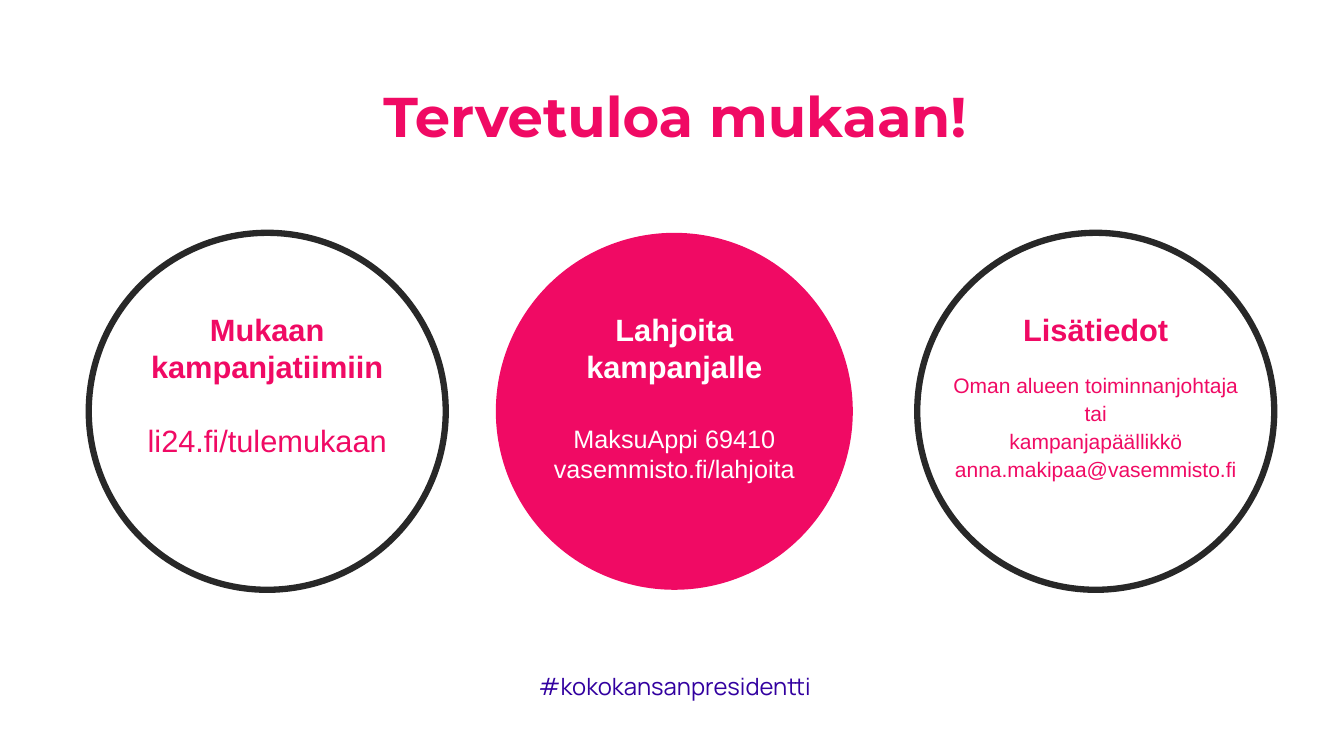
from pptx import Presentation
from pptx.dml.color import RGBColor
from pptx.enum import shapes, text
from pptx.util import Pt

PINK, WHITE, DARK, VIOLET = "F00A64", "FFFFFF", "282828", "3200A0"
DIAMETER, CIRCLE_TOP = 255, 166.3
TEXT_WIDTH, TEXT_TOP = 221, 218.2


def rgb(value):
    return RGBColor.from_string(value)


def format_paragraph(p, size, font, color, bold=False):
    p.alignment = text.PP_ALIGN.CENTER
    for r in p.runs:
        r.font.size = Pt(size)
        r.font.name = font
        r.font.bold = bold
        r.font.color.rgb = rgb(color)


def prepare_frame(sp):
    tf = sp.text_frame
    tf.word_wrap = True
    tf.auto_size = text.MSO_AUTO_SIZE.SHAPE_TO_FIT_TEXT
    tf.vertical_anchor = text.MSO_ANCHOR.TOP
    return tf


def add_title(s, content):
    sp = s.shapes.title
    sp.left, sp.top, sp.width, sp.height = Pt(34.6), Pt(54.7), Pt(895), Pt(55.4)
    tf = prepare_frame(sp)
    tf.text = content
    format_paragraph(tf.paragraphs[0], 40, "Montserrat", PINK, True)


def add_text(s, left, top, width, height):
    return prepare_frame(s.shapes.add_textbox(Pt(left), Pt(top), Pt(width), Pt(height)))


def add_hashtag(s, content):
    tf = add_text(s, 25.9, 476.6, 912.2, 28)
    tf.text = content
    format_paragraph(tf.paragraphs[0], 17, "Manrope", VIOLET)


def add_circle(s, left, filled):
    sp = s.shapes.add_shape(shapes.MSO_SHAPE.OVAL, Pt(left), Pt(CIRCLE_TOP),
                            Pt(DIAMETER), Pt(DIAMETER))
    sp.shadow.inherit = False
    if filled:
        sp.fill.solid()
        sp.fill.fore_color.rgb = rgb(PINK)
        sp.line.fill.background()
    else:
        sp.fill.background()
        sp.line.color.rgb = rgb(DARK)
        sp.line.width = Pt(4.5)


def add_circle_text(s, left, height, color, heading, lines, size, spacing, gap):
    tf = add_text(s, left + (DIAMETER - TEXT_WIDTH) / 2, TEXT_TOP, TEXT_WIDTH, height)
    tf.text = "\n".join([heading, *lines])
    title, *body = tf.paragraphs
    format_paragraph(title, 22, "Arial", color, True)
    title.line_spacing = Pt(26.4)
    for p in body:
        format_paragraph(p, size, "Arial", color)
        p.line_spacing = Pt(spacing)
    body[0].space_before = Pt(gap)


def main():
    prs = Presentation()
    prs.slide_width, prs.slide_height = Pt(960), Pt(540)
    s = prs.slides.add_slide(prs.slide_layouts[5])
    add_title(s, "Tervetuloa mukaan!")
    add_hashtag(s, "#kokokansanpresidentti")
    circles = [
        (63.4, False, 114, "Mukaan kampanjatiimiin",
         ["li24.fi/tulemukaan"], 22, 26.4, 26.4),
        (354.2, True, 132, "Lahjoita kampanjalle",
         ["MaksuAppi 69410", "vasemmisto.fi/lahjoita"], 18, 21.4, 28),
        (655.2, False, 130, "Lisätiedot",
         ["Oman alueen toiminnanjohtaja", "tai", "kampanjapäällikkö",
          "anna.makipaa@vasemmisto.fi"], 15, 20, 16),
    ]
    for left, filled, height, *content in circles:
        add_circle(s, left, filled)
        add_circle_text(s, left, height, WHITE if filled else PINK, *content)
    prs.save("out.pptx")


if __name__ == "__main__":
    main()
